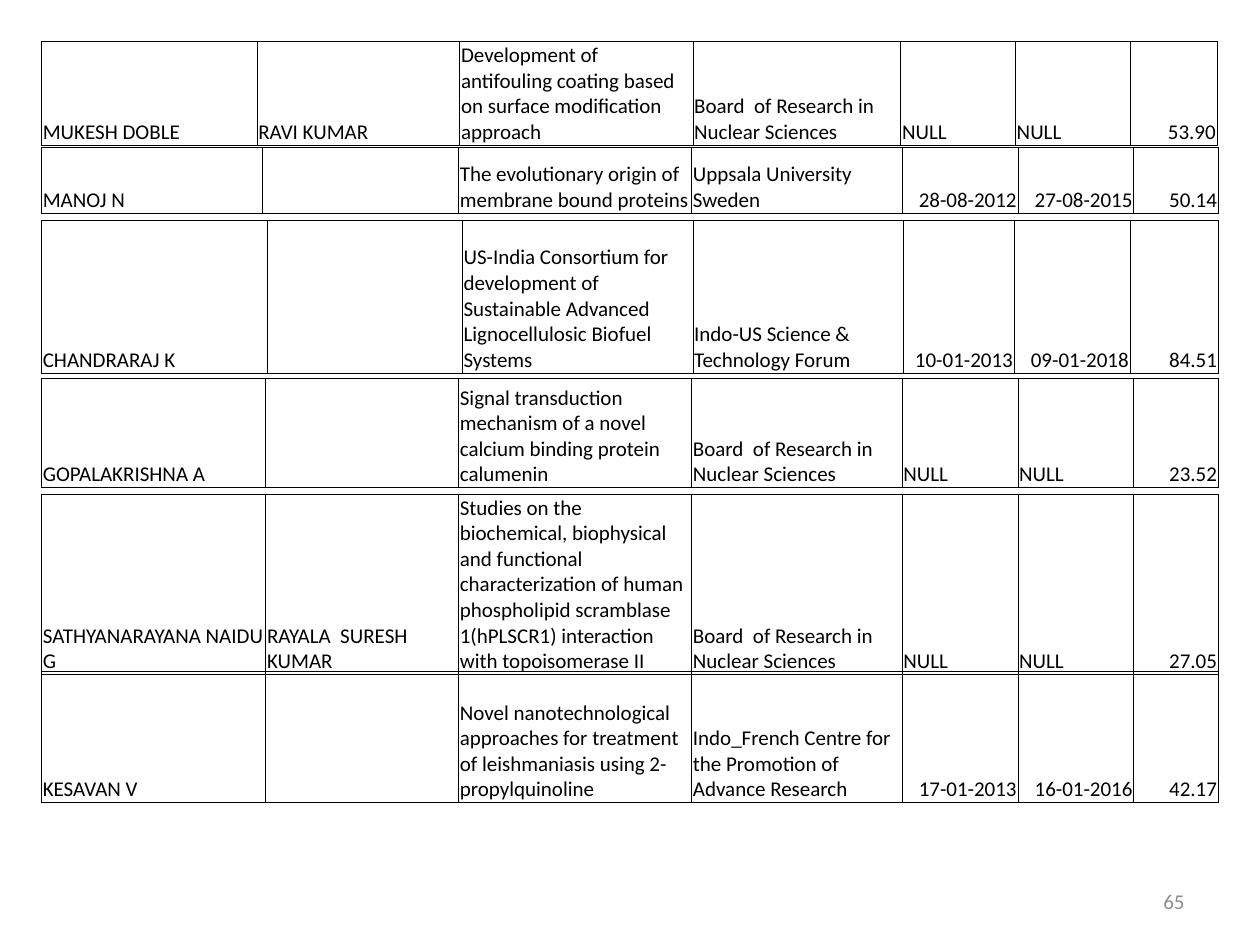
"""Build a slide listing sponsored research projects, one table per project."""
from lxml import etree
from pptx import Presentation, util as u
from pptx.dml.color import RGBColor
from pptx.enum import text
from pptx.oxml.ns import qn

LEFT, WIDTH = 0.33, 9.33
BLACK, GREY = "000000", "8C8C8C"
COMMON_COLUMNS = (1.78, 1.53, 1.85, 1.67, 0.92, 0.92, 0.67)
NUCLEAR_BOARD = "Board  of Research in Nuclear Sciences"

PROJECTS = (
    (0.33, 0.81, (1.71, 1.61, 1.85, 1.65, 0.91, 0.91, 0.69),
     ("MUKESH DOBLE", "RAVI KUMAR",
      "Development of antifouling coating based on surface modification approach",
      NUCLEAR_BOARD, "NULL", "NULL", "53.90")),
    (1.17, 0.52, (1.75, 1.56, 1.85, 1.67, 0.92, 0.92, 0.67),
     ("MANOJ N", "", "The evolutionary origin of membrane bound proteins",
      "Uppsala University Sweden", "28-08-2012", "27-08-2015", "50.14")),
    (1.75, 1.21, (1.79, 1.55, 1.83, 1.67, 0.88, 0.92, 0.7),
     ("CHANDRARAJ K", "",
      "US-India Consortium for development of Sustainable Advanced "
      "Lignocellulosic Biofuel Systems",
      "Indo-US Science & Technology Forum", "10-01-2013", "09-01-2018", "84.51")),
    (3, 0.87, COMMON_COLUMNS,
     ("GOPALAKRISHNA A", "",
      "Signal transduction mechanism of a novel calcium binding protein calumenin",
      NUCLEAR_BOARD, "NULL", "NULL", "23.52")),
    (3.92, 1.41, COMMON_COLUMNS,
     ("SATHYANARAYANA NAIDU G", "RAYALA  SURESH KUMAR",
      "Studies on the biochemical, biophysical and functional characterization of "
      "human phospholipid scramblase 1(hPLSCR1) interaction with topoisomerase II",
      NUCLEAR_BOARD, "NULL", "NULL", "27.05")),
    (5.33, 1.04, COMMON_COLUMNS,
     ("KESAVAN V", "",
      "Novel nanotechnological approaches for treatment of leishmaniasis using "
      "2-propylquinoline",
      "Indo_French Centre for the Promotion of Advance Research",
      "17-01-2013", "16-01-2016", "42.17")),
)


def color(value):
    """Return the colour for a hex string."""
    return RGBColor.from_string(value)


def write(frame, wording, ink, right=False):
    """Put one formatted paragraph into a text frame."""
    frame.text = wording
    para = frame.paragraphs[0]
    para.alignment = text.PP_ALIGN.RIGHT if right else text.PP_ALIGN.LEFT
    para.font.size = u.Pt(12)
    for span in para.runs:
        span.font.name = "Calibri"
        span.font.size = u.Pt(12)
        span.font.color.rgb = color(ink)


def add_borders(cell):
    """Draw a thin black line on all four sides of a cell."""
    properties = cell._tc.get_or_add_tcPr()
    for side in ("a:lnL", "a:lnR", "a:lnT", "a:lnB"):
        line = etree.SubElement(properties, qn(side), w=str(u.Pt(0.5)))
        fill = etree.SubElement(line, qn("a:solidFill"))
        etree.SubElement(fill, qn("a:srgbClr"), val=BLACK)


def fill_cell(cell, wording):
    """Write and format one cell, with dates and amounts to the right."""
    cell.margin_left = cell.margin_right = cell.margin_top = u.Inches(0.01)
    cell.margin_bottom = 0
    cell.vertical_anchor = text.MSO_ANCHOR.BOTTOM
    write(cell.text_frame, wording, BLACK, right=wording[:1].isdigit())
    add_borders(cell)
    cell.fill.background()


def add_project(page, top, height, widths, entries):
    """Add the single-row table of one project."""
    table = page.shapes.add_table(1, len(widths), u.Inches(LEFT), u.Inches(top),
                                  u.Inches(WIDTH), u.Inches(height)).table
    table.first_row = table.horz_banding = False
    for column, width in zip(table.columns, widths):
        column.width = u.Inches(width)
    for cell, wording in zip(table.rows[0].cells, entries):
        fill_cell(cell, wording)


def add_page_number(page, number):
    """Add the page number at the bottom right."""
    box = page.shapes.add_textbox(u.Inches(7.17), u.Inches(6.95),
                                  u.Inches(2.33), u.Inches(0.4))
    box.text_frame.word_wrap = True
    box.text_frame.vertical_anchor = text.MSO_ANCHOR.MIDDLE
    write(box.text_frame, number, GREY, right=True)


def main():
    """Build and save the deck."""
    deck = Presentation()
    deck.slide_width, deck.slide_height = u.Inches(10), u.Inches(7.5)
    page = deck.slides.add_slide(deck.slide_layouts[6])
    for project in PROJECTS:
        add_project(page, *project)
    add_page_number(page, "65")
    deck.save("out.pptx")


if __name__ == "__main__":
    main()
